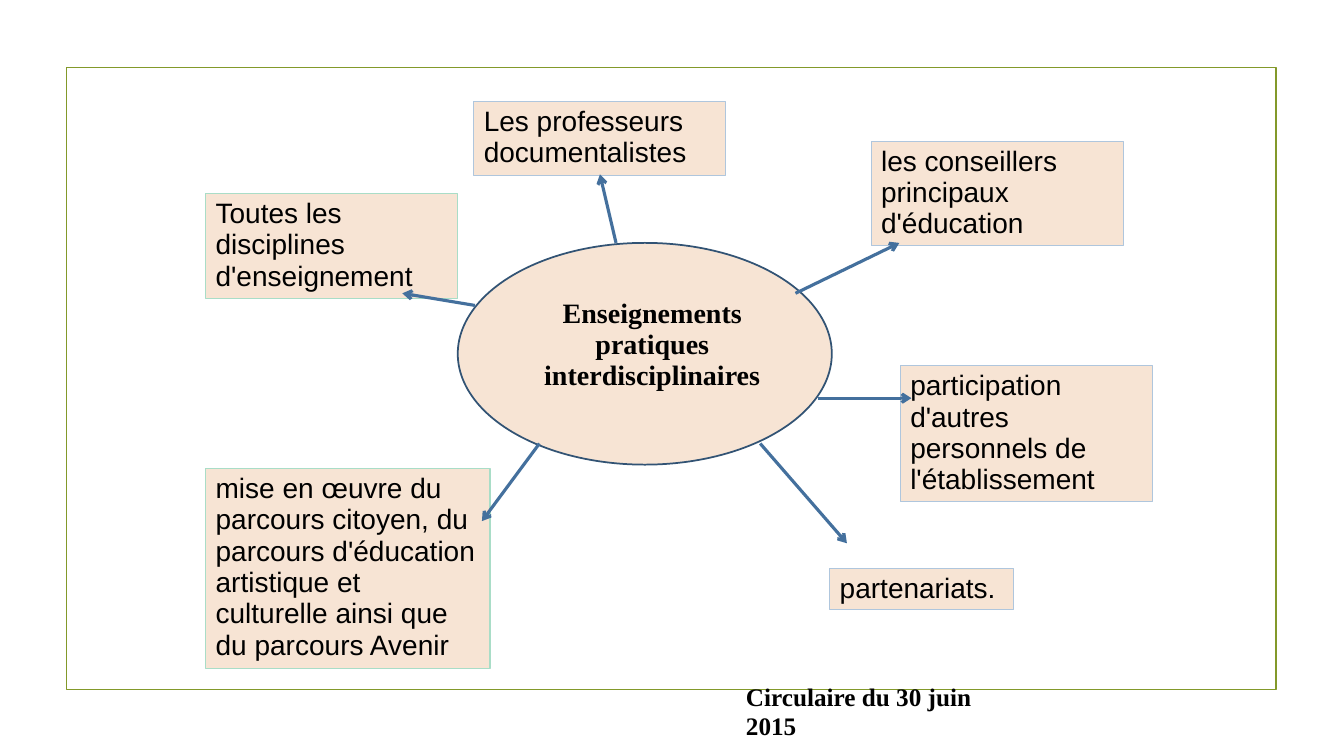
from lxml.etree import SubElement
from pptx import Presentation
from pptx.dml.color import RGBColor
from pptx.enum.shapes import MSO_CONNECTOR, MSO_SHAPE
from pptx.enum.text import MSO_ANCHOR, PP_ALIGN
from pptx.oxml.ns import qn
from pptx.util import Inches, Pt

COLORS = {
    "frame": "83992A", "peach": "F7E4D4", "green": "A9DDC7", "blue": "AFC6DD",
    "navy": "325374", "arrow": "44709D", "text": "000000",
}

# Content: text, (left, top, width, height), outline colour
ACTORS = [
    ("Toutes les disciplines d'enseignement", (2.04, 1.92, 2.5, 1.04), "green"),
    ("Les professeurs documentalistes", (4.7, 1.01, 2.5, 0.73), "blue"),
    ("mise en œuvre du parcours citoyen, du parcours d'éducation artistique et "
     "culturelle ainsi que du parcours Avenir", (2.04, 4.65, 2.82, 1.98), "green"),
    ("participation d'autres personnels de l'établissement",
     (8.93, 3.63, 2.5, 1.35), "blue"),
    ("partenariats.", (8.23, 5.64, 1.82, 0.41), "blue"),
    ("les conseillers principaux d'éducation", (8.64, 1.4, 2.5, 1.04), "blue"),
]
TOPIC = ("Enseignements pratiques interdisciplinaires", (5.25, 2.91, 2.44, 1.04))
SOURCE = ("Circulaire du 30 juin 2015", (7.3, 6.74, 2.91, 0.38))
FRAME = (0.66, 0.67, 12, 6.17)
ELLIPSE = (4.54, 2.41, 3.71, 2.2)

# Arrows from the ellipse: start x, start y, end x, end y
ARROWS = [
    (6.11, 2.41, 5.95, 1.73),
    (4.71, 3.03, 3.99, 2.91),
    (7.89, 2.91, 8.92, 2.41),
    (5.35, 4.4, 4.78, 5.17),
    (7.54, 4.4, 8.4, 5.39),
    (8.11, 3.95, 9.04, 3.95),
]


def color(name):
    return RGBColor.from_string(COLORS[name])


def inches(values):
    return [Inches(value) for value in values]


def add_outline(slide, kind, place, line, width, fill=None):
    shape = slide.shapes.add_shape(kind, *inches(place))
    shape.shadow.inherit = False
    if fill:
        shape.fill.solid()
        shape.fill.fore_color.rgb = color(fill)
    else:
        shape.fill.background()
    shape.line.color.rgb = color(line)
    shape.line.width = Pt(width)
    return shape


def write(shape, text, font, size, bold=False, align=PP_ALIGN.LEFT):
    frame = shape.text_frame
    frame.word_wrap = True
    frame.vertical_anchor = MSO_ANCHOR.TOP
    paragraph = frame.paragraphs[0]
    paragraph.alignment = align
    paragraph.line_spacing = 0.93
    run = paragraph.add_run()
    run.text = text
    run.font.name = font
    run.font.size = Pt(size)
    run.font.bold = bold
    run.font.color.rgb = color("text")


def add_arrow(slide, points):
    connector = slide.shapes.add_connector(MSO_CONNECTOR.STRAIGHT, *inches(points))
    connector.line.color.rgb = color("arrow")
    connector.line.width = Pt(2.25)
    properties = connector._element.spPr
    SubElement(properties.find(qn("a:ln")), qn("a:tailEnd"), type="arrow")
    SubElement(properties, qn("a:effectLst"))


def main():
    presentation = Presentation()
    presentation.slide_width = Inches(13.33)
    presentation.slide_height = Inches(7.5)
    slide = presentation.slides.add_slide(presentation.slide_layouts[6])

    # Frame and source line
    add_outline(slide, MSO_SHAPE.RECTANGLE, FRAME, "frame", 1.25)
    text, place = SOURCE
    write(slide.shapes.add_textbox(*inches(place)), text, "Times New Roman", 18, True)

    # Boxes around the topic
    for text, place, line in ACTORS:
        box = add_outline(slide, MSO_SHAPE.RECTANGLE, place, line, 0.75, "peach")
        write(box, text, "Arial", 20)

    # Central topic
    add_outline(slide, MSO_SHAPE.OVAL, ELLIPSE, "navy", 1.25, "peach")
    text, place = TOPIC
    write(slide.shapes.add_textbox(*inches(place)), text, "Times New Roman", 20,
          True, PP_ALIGN.CENTER)

    # Arrows
    for points in ARROWS:
        add_arrow(slide, points)

    presentation.save("out.pptx")


if __name__ == "__main__":
    main()
